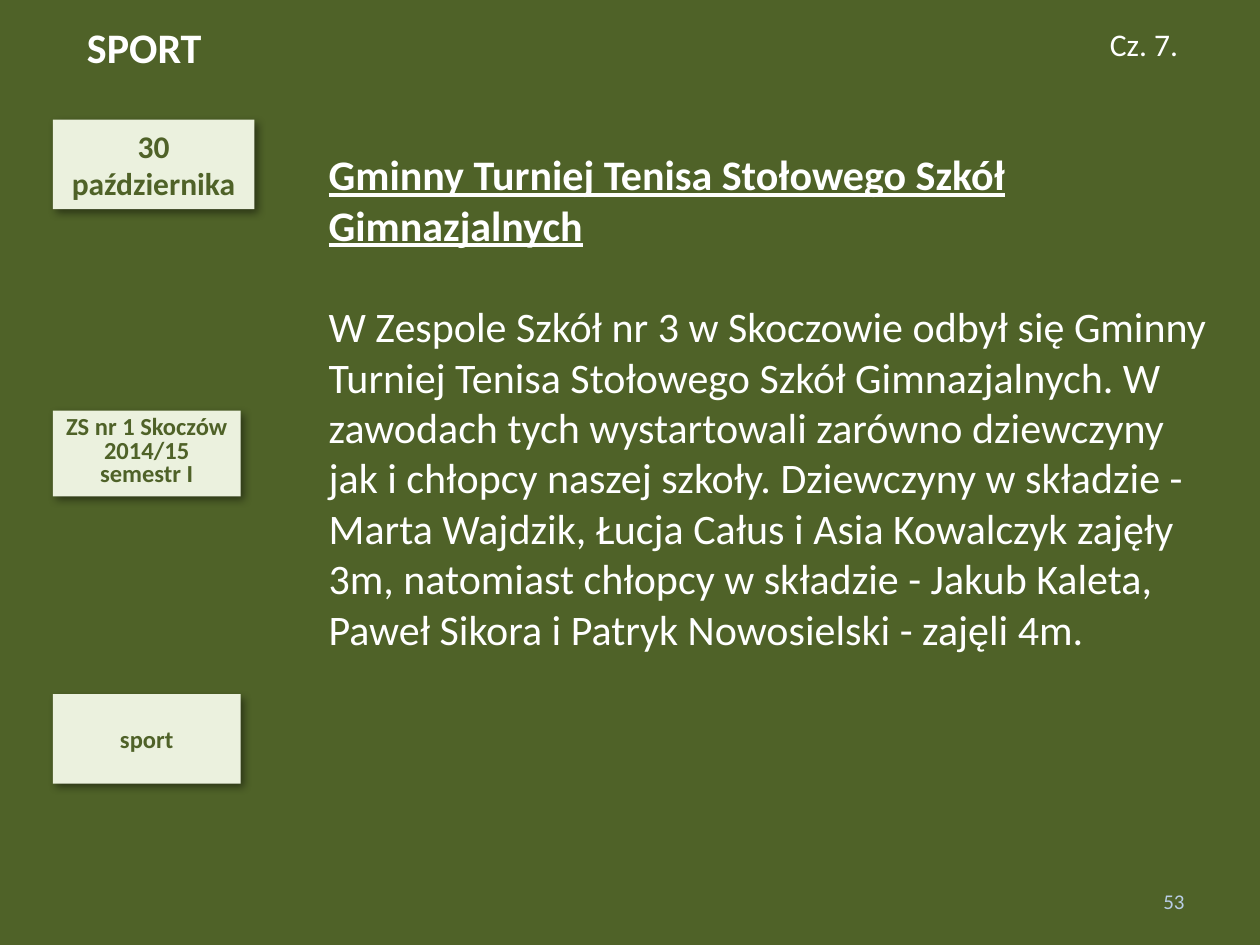
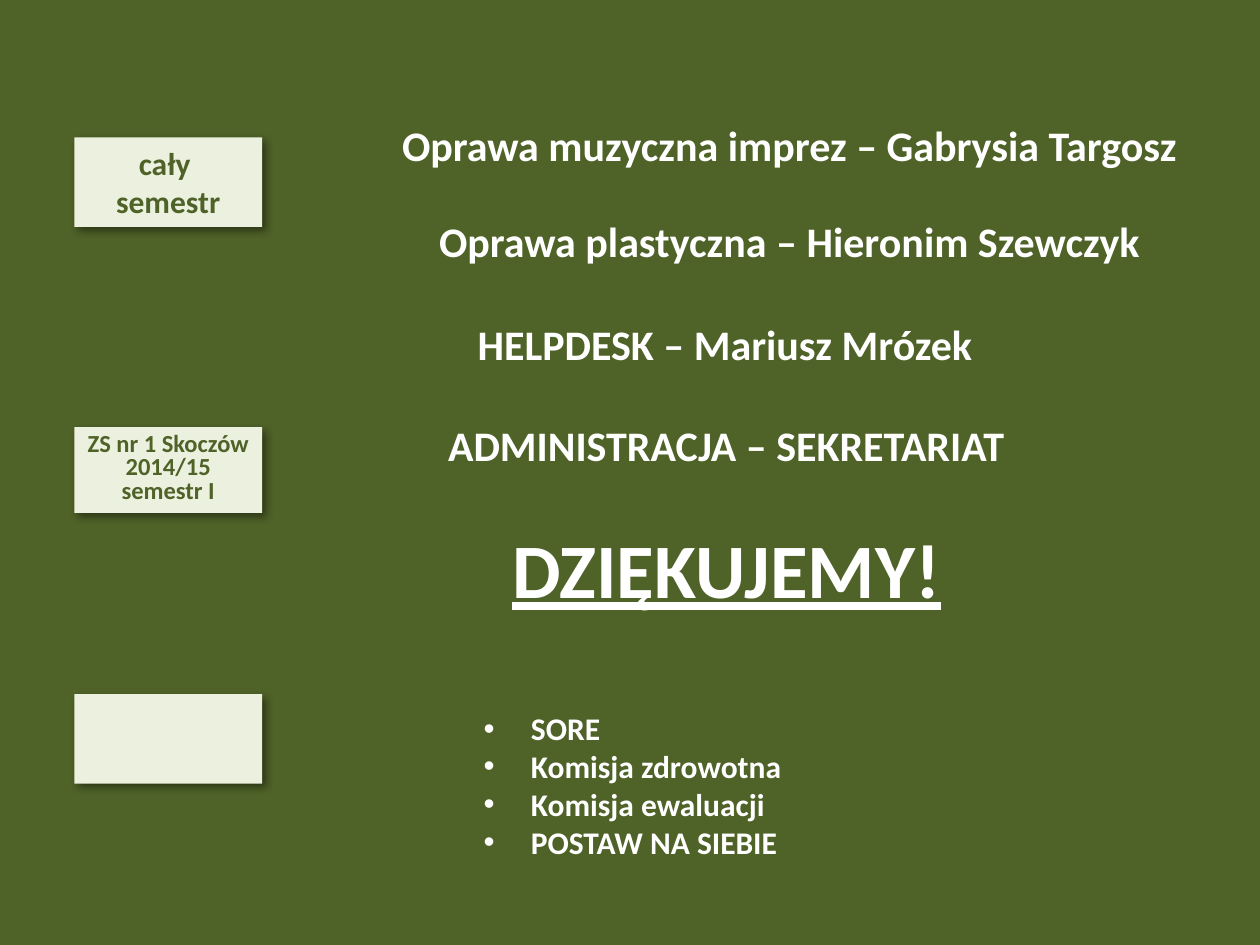
from lxml import etree
from pptx import Presentation
from pptx.dml.color import RGBColor
from pptx.enum.shapes import MSO_SHAPE
from pptx.enum.text import MSO_ANCHOR, MSO_AUTO_SIZE, PP_ALIGN
from pptx.oxml.ns import qn
from pptx.util import Pt

RECTANGLE = MSO_SHAPE.RECTANGLE
TOP, MIDDLE = MSO_ANCHOR.TOP, MSO_ANCHOR.MIDDLE
LEFT, CENTER, RIGHT = PP_ALIGN.LEFT, PP_ALIGN.CENTER, PP_ALIGN.RIGHT
GROW, FIXED = MSO_AUTO_SIZE.SHAPE_TO_FIT_TEXT, MSO_AUTO_SIZE.NONE
TITLE_ONLY, BLANK = 5, 6

COLORS = {
    "background": "4F6228",
    "card": "EBF1DE",
    "text": "FFFFFF",
    "number": "B9CDE5",
    "shadow": "000000",
}
FONT = "Calibri"
BODY_SIZE = 24
BLANK_LINE = 29.3
BULLET_INDENT = 27
CARD_WIDTH = 107.3
CARD_HEIGHT = 51.1
SCHOOL_HEIGHT = 49
LAST_CARD_TOP = 396.7
SCHOOL_LINES = ["ZS nr 1 Skoczów 2014/15", "semestr I"]


class Deck:
    """Holds the shared style and the current slide."""

    def __init__(self):
        """Create a 4:3 presentation with a green background."""
        self.presentation = Presentation()
        self.presentation.slide_width = Pt(720)
        self.presentation.slide_height = Pt(540)
        fill = self.presentation.slide_master.background.fill
        fill.solid()
        fill.fore_color.rgb = RGBColor.from_string(COLORS["background"])
        self.slide = None

    def new_slide(self, layout):
        """Add a slide and make it the current one."""
        layouts = self.presentation.slide_layouts
        self.slide = self.presentation.slides.add_slide(layouts[layout])

    def fill_frame(self, frame, lines, size=BODY_SIZE, color="text", bold=True,
                   bullet=None, **paragraph_format):
        """Fill a frame with lines, each a string or a pair of text and format."""
        for index, line in enumerate(lines):
            text, own = (line, {}) if isinstance(line, str) else line
            paragraph = frame.paragraphs[0] if index == 0 else frame.add_paragraph()
            paragraph.text = text
            if bullet:
                self.add_bullet(paragraph, bullet)
            for name, value in paragraph_format.items():
                setattr(paragraph, name, value)
            values = {"name": FONT, "size": Pt(size), "bold": bold, **own}
            if "space_before" in values:
                paragraph.space_before = values.pop("space_before")
            font = paragraph.runs[0].font
            for name, value in values.items():
                setattr(font, name, value)
            font.color.rgb = RGBColor.from_string(COLORS[color])

    def add_bullet(self, paragraph, character):
        """Give a paragraph a bullet and a hanging indent."""
        properties = paragraph._p.get_or_add_pPr()
        properties.set("marL", str(Pt(BULLET_INDENT)))
        properties.set("indent", str(-Pt(BULLET_INDENT)))
        font = etree.SubElement(properties, qn("a:buFont"))
        font.set("typeface", "Arial")
        etree.SubElement(properties, qn("a:buChar")).set("char", character)

    def title(self, text, left, top, width, height):
        """Place and format the title placeholder."""
        title = self.slide.shapes.title
        box = {"left": left, "top": top, "width": width, "height": height}
        for name, value in box.items():
            setattr(title, name, Pt(value))
        frame = title.text_frame
        frame.vertical_anchor, frame.auto_size = TOP, FIXED
        self.fill_frame(frame, [text], alignment=LEFT)

    def text(self, lines, left, top, width, height, anchor=TOP, wrap=True,
             **style):
        """Add a text box."""
        box = self.slide.shapes.add_textbox(Pt(left), Pt(top), Pt(width), Pt(height))
        frame = box.text_frame
        frame.word_wrap, frame.vertical_anchor = wrap, anchor
        frame.auto_size = GROW if anchor == TOP else FIXED
        self.fill_frame(frame, lines, **style)

    def card(self, lines, left, top, width=CARD_WIDTH, height=CARD_HEIGHT,
             anchor=MIDDLE, **style):
        """Add a pale rectangle with a soft shadow and centred text."""
        card = self.slide.shapes.add_shape(
            RECTANGLE, Pt(left), Pt(top), Pt(width), Pt(height))
        card.fill.solid()
        card.fill.fore_color.rgb = RGBColor.from_string(COLORS["card"])
        card.line.fill.background()
        self.cast_shadow(card)
        card.text_frame.word_wrap = True
        card.text_frame.vertical_anchor = anchor
        self.fill_frame(card.text_frame, lines, color="background",
                        alignment=CENTER, **style)

    def cast_shadow(self, shape):
        """Give a shape an outer shadow towards the lower right."""
        shape.shadow.inherit = False
        effects = shape._element.spPr.find(qn("a:effectLst"))
        shadow = etree.SubElement(effects, qn("a:outerShdw"))
        values = {"blurRad": Pt(5), "dist": Pt(3), "dir": 45 * 60000,
                  "algn": "tl", "rotWithShape": 0}
        for name, value in values.items():
            shadow.set(name, str(value))
        color = etree.SubElement(shadow, qn("a:srgbClr"))
        color.set("val", COLORS["shadow"])
        etree.SubElement(color, qn("a:alpha")).set("val", "43000")

    def side_cards(self, left, top, date_lines, school_top, topic_lines,
                   date_width=CARD_WIDTH):
        """Add the date, topic and school cards down the left side."""
        self.card(date_lines, left, top, date_width, size=18)
        self.card(topic_lines, left, LAST_CARD_TOP, size=14)
        self.card(SCHOOL_LINES, left, school_top, height=SCHOOL_HEIGHT,
                  anchor=TOP, size=14, line_spacing=0.8)


def build_sport_slide(deck):
    """Build the table tennis tournament slide."""
    deck.new_slide(TITLE_ONLY)
    deck.title("SPORT", 42.5, 8.6, 286.6, 36)
    deck.side_cards(30.2, 68.4, ["30", "października"], 234.7, ["sport"],
                    date_width=115.2)
    deck.text(["53"], 516.2, 500.4, 167.8, 28.8, anchor=MIDDLE, size=12,
              color="number", bold=False, alignment=RIGHT)
    deck.text(["Cz. 7."], 627.1, 10.8, 54, 28.8, wrap=False, size=18, bold=False)
    report = (
        "W Zespole Szkół nr 3 w Skoczowie odbył się Gminny Turniej Tenisa "
        "Stołowego Szkół Gimnazjalnych. W zawodach tych wystartowali zarówno "
        "dziewczyny jak i chłopcy naszej szkoły. Dziewczyny w składzie - Marta "
        "Wajdzik, Łucja Całus i Asia Kowalczyk zajęły 3m, natomiast chłopcy w "
        "składzie - Jakub Kaleta, Paweł Sikora i Patryk Nowosielski - zajęli 4m."
    )
    deck.text([
        ("Gminny Turniej Tenisa Stołowego Szkół Gimnazjalnych",
         {"underline": True}),
        (report, {"bold": False, "space_before": Pt(BLANK_LINE)}),
    ], 180.7, 81.4, 524.2, 298.1)


def build_thanks_slide(deck):
    """Build the closing slide with credits and thanks."""
    deck.new_slide(BLANK)
    deck.side_cards(42.5, 78.5, ["cały ", "semestr"], 244.1, [])
    credits = [
        ("Oprawa muzyczna imprez – Gabrysia Targosz", 182.2, 64.8),
        ("Oprawa plastyczna – Hieronim Szewczyk", 182.2, 119.5),
        ("HELPDESK – Mariusz Mrózek", 145.4, 178.6),
    ]
    for credit, left, top in credits:
        deck.text([credit], left, top, 537.8, 36, alignment=CENTER)
    deck.text([
        "ADMINISTRACJA – SEKRETARIAT",
        ("DZIĘKUJEMY!", {"size": Pt(44), "underline": True,
                         "space_before": Pt(BLANK_LINE)}),
    ], 182.2, 236.2, 465.8, 118.8, alignment=CENTER)
    teams = ["SORE", "Komisja zdrowotna", "Komisja ewaluacji", "POSTAW NA SIEBIE"]
    deck.text(teams, 269.3, 401.8, 266.4, 138.2, size=18, bullet="•")


def main():
    """Build both slides and save the presentation."""
    deck = Deck()
    build_sport_slide(deck)
    build_thanks_slide(deck)
    deck.presentation.save("out.pptx")


if __name__ == "__main__":
    main()
